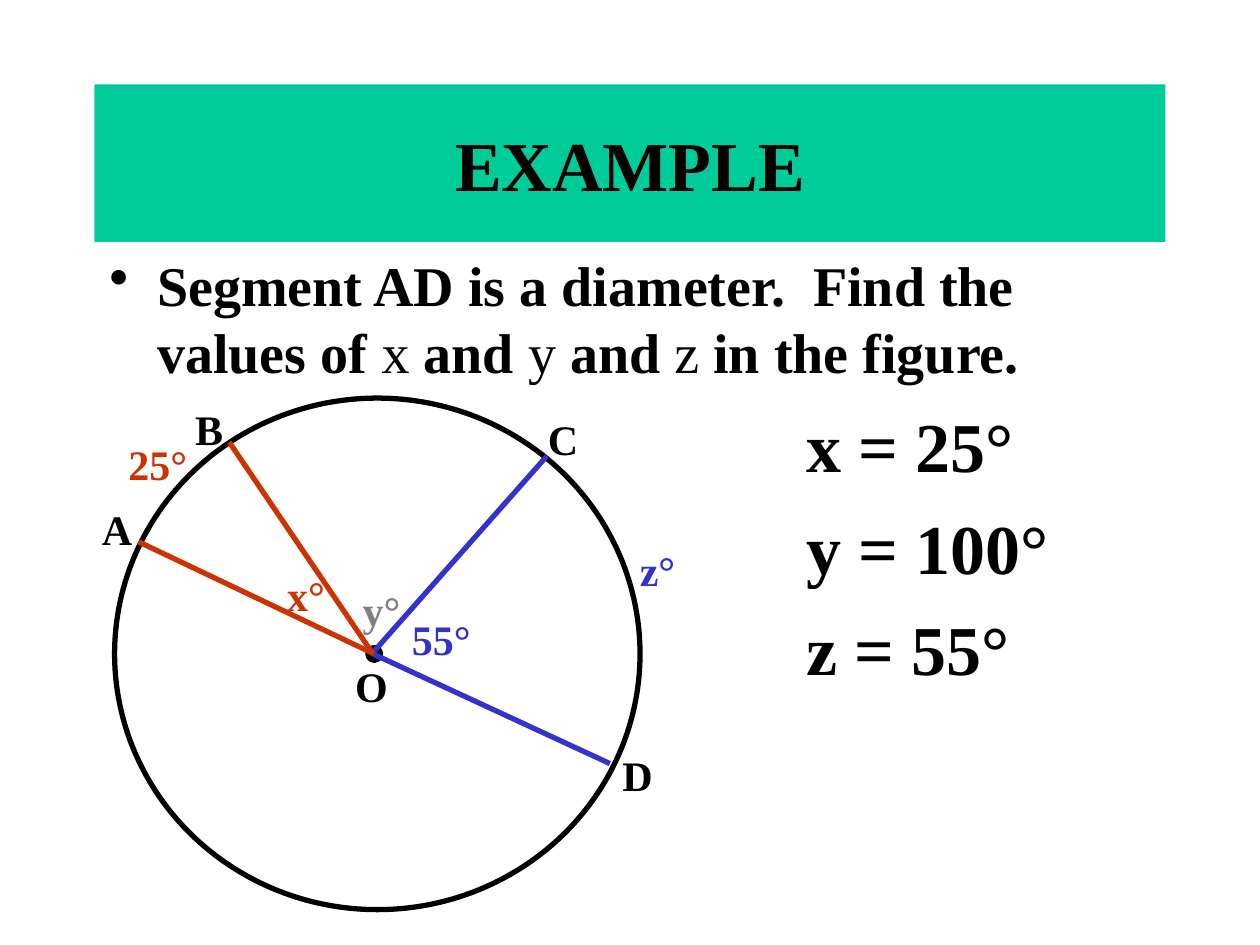
from typing import NamedTuple

from lxml.etree import SubElement
from pptx import Presentation
from pptx.dml.color import RGBColor
from pptx.enum.shapes import MSO_CONNECTOR as Connector, MSO_SHAPE as Shape
from pptx.enum.text import MSO_ANCHOR as Anchor, PP_ALIGN as Align
from pptx.oxml.ns import qn
from pptx.util import Inches, Pt

FONT = "Times New Roman"
COLORS = {"ink": "000000", "band": "00CC99", "blue": "3333CC", "red": "CC3300", "gray": "808080"}


class Radius(NamedTuple):
    """A line from a point on the circle to the centre."""
    x: float
    y: float
    end_x: float
    color: str


class Label(NamedTuple):
    """A short text beside a point, angle or arc."""
    text: str
    left: float
    top: float
    color: str = "ink"
    width: float = 0.52


CENTER_Y = 5.19
RADII = [
    Radius(4.34, 3.62, 2.95, "blue"),
    Radius(4.84, 6.06, 2.96, "blue"),
    Radius(1.82, 3.51, 2.96, "red"),
    Radius(1.1, 4.3, 2.97, "red"),
]
LABELS = [
    Label("A", 0.71, 3.95),
    Label("B", 1.45, 3.15),
    Label("O", 2.72, 5.19),
    Label("C", 4.25, 3.23),
    Label("D", 4.84, 5.9),
    Label("55°", 3.17, 4.82, "blue", 0.86),
    Label("x°", 2.18, 4.47, "red"),
    Label("y°", 2.78, 4.59, "gray"),
    Label("25°", 0.92, 3.43, "red", 0.86),
    Label("z°", 4.98, 4.27, "blue"),
]
QUESTION = ["Segment AD is a diameter.  Find the values of ", "x", " and ", "y", " and ", "z", " in the figure."]
ANSWERS = ["x = 25°", "y = 100°", "z = 55°"]


def rgb(name: str) -> RGBColor:
    """Look up a named colour."""
    return RGBColor.from_string(COLORS[name])


def style(span, size: float, color: str = "ink", bold: bool = True) -> None:
    """Set the font of a run."""
    span.font.name, span.font.size, span.font.bold = FONT, Pt(size), bold
    span.font.color.rgb = rgb(color)


def add_box(page, left: float, top: float, width: float, height: float):
    """Add a wrapping text box and return its frame."""
    box = page.shapes.add_textbox(Inches(left), Inches(top), Inches(width), Inches(height))
    box.text_frame.word_wrap = True
    return box.text_frame


def add_title(page, text: str) -> None:
    """Draw the title band."""
    band = page.shapes.add_shape(Shape.RECTANGLE, Inches(0.75), Inches(0.67), Inches(8.5), Inches(1.25))
    band.shadow.inherit = False
    band.fill.solid()
    band.fill.fore_color.rgb = rgb("band")
    band.line.fill.background()
    band.text_frame.text = text
    band.text_frame.vertical_anchor = Anchor.MIDDLE
    para = band.text_frame.paragraphs[0]
    para.alignment = Align.CENTER
    style(para.runs[0], 40)


def add_body(page) -> None:
    """Write the bulleted question and the indented answers."""
    frame = add_box(page, 0.77, 1.94, 8.5, 4.5)
    para = frame.paragraphs[0]
    para.space_before = Pt(6.4)
    props = para._p.get_or_add_pPr()
    props.set("marL", str(Inches(0.38)))
    props.set("indent", str(Inches(-0.38)))
    SubElement(props, qn("a:buChar")).set("char", "•")
    for index, text in enumerate(QUESTION):
        span = para.add_run()
        span.text = text
        style(span, 32, bold=index % 2 == 0)
    for answer in ANSWERS:
        para = frame.add_paragraph()
        para.text = answer
        para.space_before = Pt(10)
        para._p.get_or_add_pPr().set("marL", str(Inches(5.53)))
        style(para.runs[0], 40)


def add_ellipse(page, left: float, top: float, width: float, height: float, weight: float) -> None:
    """Draw an unfilled ellipse."""
    ring = page.shapes.add_shape(Shape.OVAL, Inches(left), Inches(top), Inches(width), Inches(height))
    ring.shadow.inherit = False
    ring.fill.background()
    ring.line.color.rgb = rgb("ink")
    ring.line.width = Pt(weight)


def add_radius(page, radius: Radius) -> None:
    """Draw one radius of the circle."""
    line = page.shapes.add_connector(
        Connector.STRAIGHT, Inches(radius.x), Inches(radius.y), Inches(radius.end_x), Inches(CENTER_Y))
    line.line.color.rgb = rgb(radius.color)
    line.line.width = Pt(3)
    SubElement(line._element.spPr, qn("a:effectLst"))


def add_label(page, label: Label) -> None:
    """Write one label of the figure."""
    frame = add_box(page, label.left, label.top, label.width, 0.5)
    frame.text = label.text
    style(frame.paragraphs[0].runs[0], 24, label.color)


def main() -> None:
    """Build the slide and save it."""
    deck = Presentation()
    deck.slide_width, deck.slide_height = Inches(10), Inches(7.5)
    page = deck.slides.add_slide(deck.slide_layouts[6])
    add_title(page, "EXAMPLE")
    add_body(page)
    add_ellipse(page, 0.91, 3.16, 4.17, 4.06, 3)
    add_ellipse(page, 2.93, 5.15, 0.08, 0.08, 4.5)
    for radius in RADII:
        add_radius(page, radius)
    for label in LABELS:
        add_label(page, label)
    deck.save("out.pptx")


if __name__ == "__main__":
    main()
